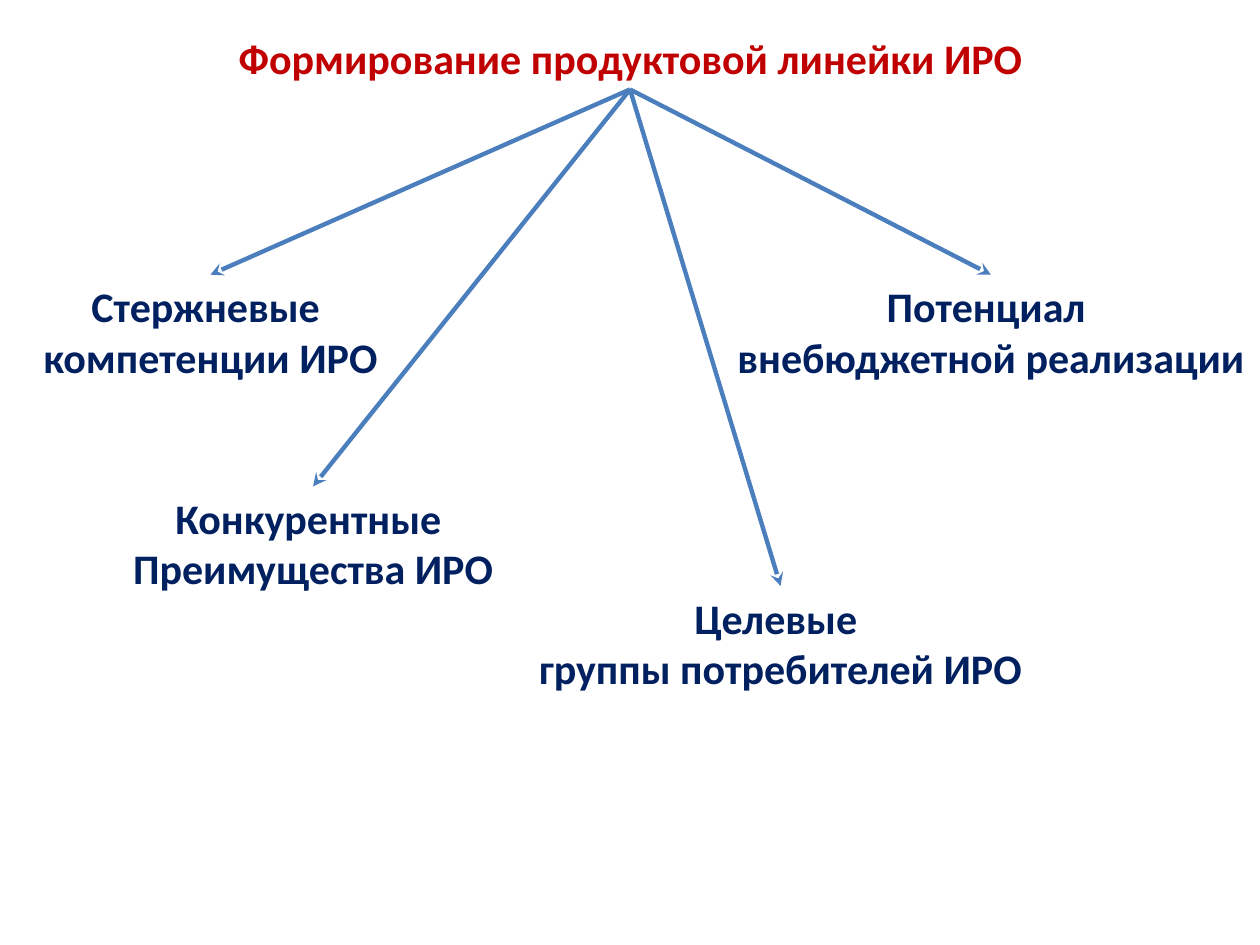
from dataclasses import dataclass

from lxml.etree import SubElement
from pptx import Presentation
from pptx.dml.color import RGBColor
from pptx.enum.shapes import MSO_CONNECTOR
from pptx.enum.text import MSO_ANCHOR, MSO_AUTO_SIZE, PP_ALIGN
from pptx.oxml.ns import qn
from pptx.util import Inches, Pt


@dataclass(frozen=True)
class Theme:
    font: str = "Calibri"
    text_size: Pt = Pt(24)
    arrow_width: Pt = Pt(2.5)
    title: RGBColor = RGBColor(0xC0, 0x00, 0x00)
    factor: RGBColor = RGBColor(0x00, 0x20, 0x60)
    arrow: RGBColor = RGBColor(0x4B, 0x7E, 0xBC)


theme = Theme()


def format_text(frame, color, wrap):
    frame.word_wrap = wrap
    frame.auto_size = MSO_AUTO_SIZE.SHAPE_TO_FIT_TEXT
    frame.vertical_anchor = MSO_ANCHOR.TOP
    for paragraph in frame.paragraphs:
        paragraph.alignment = PP_ALIGN.CENTER
        for run in paragraph.runs:
            run.font.name = theme.font
            run.font.size = theme.text_size
            run.font.bold = True
            run.font.color.rgb = color


def add_arrow(slide, start, end):
    arrow = slide.shapes.add_connector(MSO_CONNECTOR.STRAIGHT, *start, *end)
    arrow.line.color.rgb = theme.arrow
    arrow.line.width = theme.arrow_width
    SubElement(arrow.line._get_or_add_ln(), qn("a:tailEnd"), type="stealth")
    SubElement(arrow._element.spPr, qn("a:effectLst"))


presentation = Presentation()
presentation.slide_width = Inches(10)
presentation.slide_height = Inches(7.5)
slide = presentation.slides.add_slide(presentation.slide_layouts[5])

# Title
title = slide.shapes.title
title.left, title.top = Inches(0.28), Inches(0.21)
title.width, title.height = Inches(9.45), Inches(0.5)
title.text_frame.text = "Формирование продуктовой линейки ИРО"
title.text_frame.paragraphs[0].space_after = Pt(6)
format_text(title.text_frame, theme.title, wrap=True)

# Factors: left, top, width and wording; an arrow runs to each from the title
factors = [
    (0.23, 2.18, 2.88, "Стержневые \nкомпетенции ИРО"),
    (4.16, 4.65, 4.07, "Целевые \nгруппы потребителей ИРО"),
    (5.73, 2.18, 4.27, "Потенциал \nвнебюджетной реализации"),
    (0.94, 3.86, 3.09, "Конкурентные \nПреимущества ИРО"),
]
arrow_origin = Inches(5), Inches(0.71)
for left, top, width, wording in factors:
    factor = slide.shapes.add_textbox(
        Inches(left), Inches(top), Inches(width), Inches(0.91))
    factor.text_frame.text = wording
    format_text(factor.text_frame, theme.factor, wrap=False)
    add_arrow(slide, arrow_origin, (Inches(left + width / 2), Inches(top)))

presentation.save("out.pptx")
